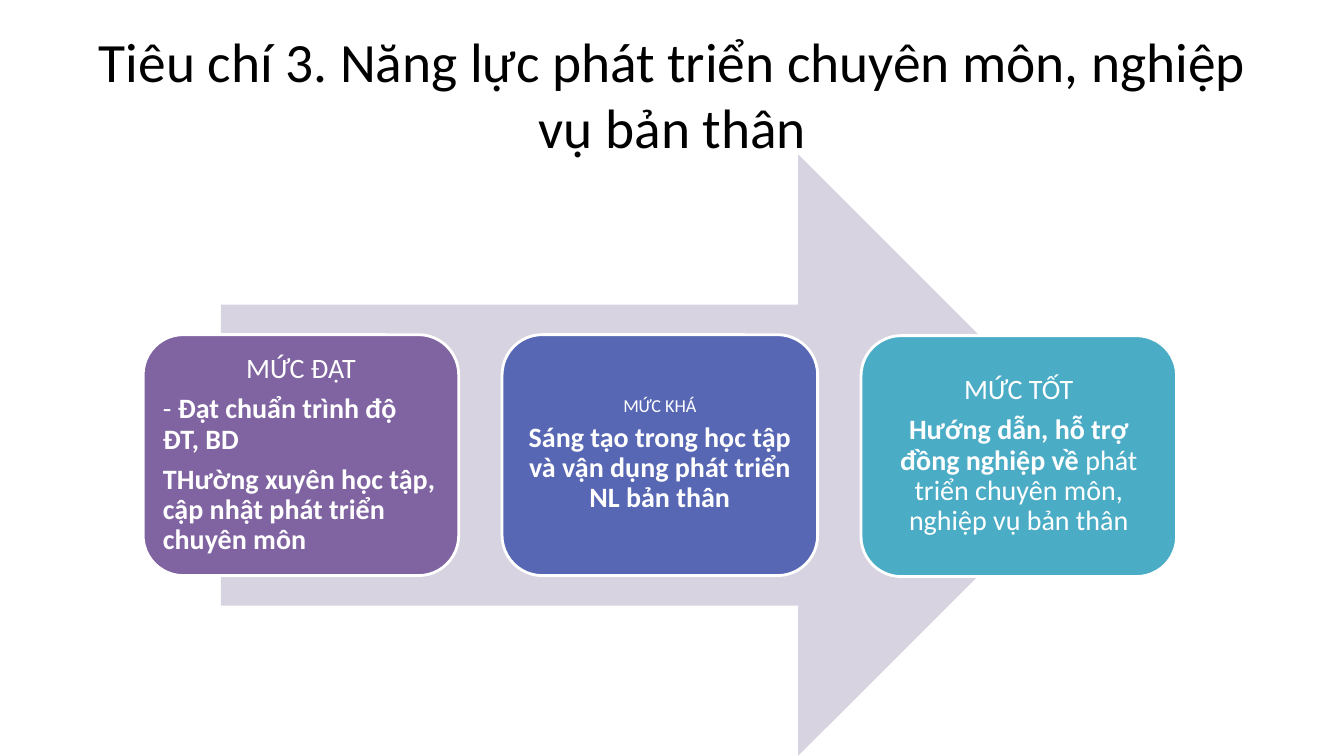
import pptx
import pptx.util
import pptx.dml.color
import pptx.enum.shapes
import pptx.enum.text

Inches, Pt = pptx.util.Inches, pptx.util.Pt
SHAPE = pptx.enum.shapes.MSO_SHAPE
ALIGN = pptx.enum.text.PP_ALIGN
MIDDLE = pptx.enum.text.MSO_ANCHOR.MIDDLE

# Content: each level has a fill, top, inset, body alignment and paragraphs;
# a paragraph is a size and its runs (text, bold)
TITLE = "Tiêu chí 3. Năng lực phát triển chuyên môn, nghiệp vụ bản thân"
LEVELS = [
    ("8064A2", 3.32, 0.08, ALIGN.LEFT, [
        (20, [("MỨC ĐẠT", False)]),
        (20, [("- ", False), ("Đạt chuẩn trình độ ĐT, BD", True)]),
        (20, [("THường xuyên học tập, cập nhật phát triển chuyên môn", True)]),
    ]),
    ("5767B4", 3.32, 0.05, ALIGN.CENTER, [
        (13, [("MỨC KHÁ", False)]),
        (20, [("Sáng tạo trong học tập và vận dụng phát triển NL bản thân", True)]),
    ]),
    ("4BACC6", 3.33, 0.08, ALIGN.CENTER, [
        (20, [("MỨC TỐT", False)]),
        (20, [("Hướng dẫn, hỗ trợ đồng nghiệp về ", True),
              ("phát triển chuyên môn, nghiệp vụ bản thân", False)]),
    ]),
]
FONT = "Calibri"
BOX_LEFT, BOX_STEP, BOX_W, BOX_H = 1.42, 3.56, 3.13, 2.39


def color(value):
    return pptx.dml.color.RGBColor.from_string(value)


def add_filled(s, kind, box, fill):
    sp = s.shapes.add_shape(kind, *map(Inches, box))
    sp.shadow.inherit = False
    sp.fill.solid()
    sp.fill.fore_color.rgb = color(fill)
    return sp


def style(p, size, align, ink):
    p.alignment = align
    p.font.name, p.font.size = FONT, Pt(size)
    p.font.color.rgb = color(ink)


def add_level(s, column, fill, top, inset, body_align, paragraphs):
    left = BOX_LEFT + column * BOX_STEP
    sp = add_filled(s, SHAPE.ROUNDED_RECTANGLE, (left, top, BOX_W, BOX_H), fill)
    sp.line.color.rgb = color("FFFFFF")
    sp.line.width = Pt(2)
    tf = sp.text_frame
    tf.word_wrap = True
    tf.vertical_anchor = MIDDLE
    tf.margin_left = tf.margin_right = tf.margin_top = tf.margin_bottom = Inches(inset)
    for i, (size, runs) in enumerate(paragraphs):
        p = tf.add_paragraph() if i else tf.paragraphs[0]
        style(p, size, body_align if i else ALIGN.CENTER, "FFFFFF")
        p.line_spacing = 0.9
        p.space_after = Pt(0.35 * size)
        for text, bold in runs:
            r = p.add_run()
            r.text, r.font.bold = text, bold


def main():
    prs = pptx.Presentation()
    prs.slide_width, prs.slide_height = Inches(13.33), Inches(7.5)
    s = prs.slides.add_slide(prs.slide_layouts[5])

    # Title
    title = s.shapes.title
    title.left, title.top, title.width, title.height = map(Inches, (0.67, 0.3, 12, 1.25))
    tf = title.text_frame
    tf.text = TITLE
    tf.word_wrap = True
    tf.auto_size = pptx.enum.text.MSO_AUTO_SIZE.NONE
    tf.vertical_anchor = MIDDLE
    style(tf.paragraphs[0], 39.6, ALIGN.CENTER, "000000")

    # Arrow behind the levels
    arrow = add_filled(s, SHAPE.RIGHT_ARROW, (2.19, 1.53, 8.71, 5.97), "D8D3E0")
    arrow.line.fill.background()

    # Levels
    for column, level in enumerate(LEVELS):
        add_level(s, column, *level)

    prs.save("out.pptx")


if __name__ == "__main__":
    main()
